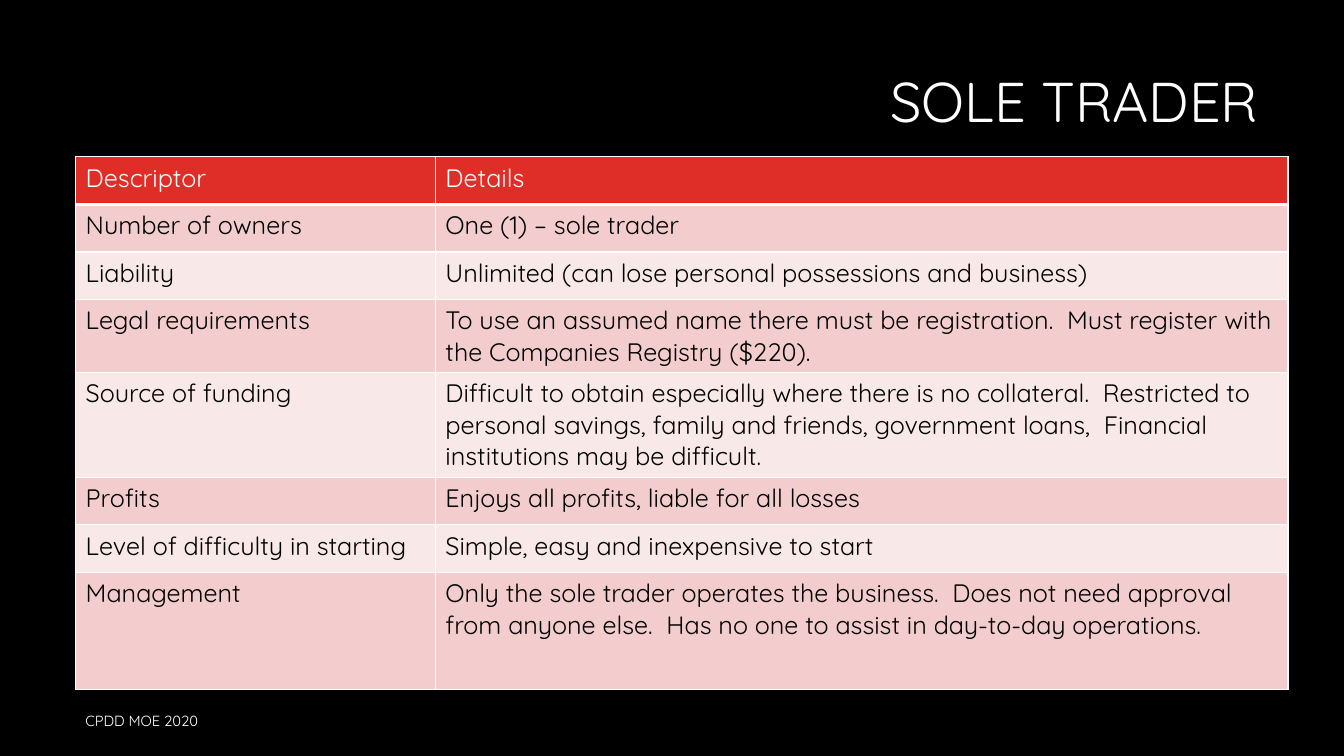
from lxml.etree import SubElement
from pptx import Presentation
from pptx.dml.color import RGBColor
from pptx.enum.text import MSO_ANCHOR as Anchor, PP_ALIGN as Align
from pptx.oxml.ns import qn
from pptx.util import Pt

FONT = "Quicksand"
WHITE, BLACK, RED = "FFFFFF", "000000", "DF2E28"
BANDS = ("F3CDCD", "F9E8E8")
COLUMN_WIDTHS = (257, 609)
ROWS = (
    (34, "Descriptor", "Details"),
    (34, "Number of owners", "One (1) – sole trader"),
    (34, "Liability", "Unlimited (can lose personal possessions and business)"),
    (52, "Legal requirements",
     "To use an assumed name there must be registration.  Must register with "
     "the Companies Registry ($220)."),
    (75, "Source of funding",
     "Difficult to obtain especially where there is no collateral.  Restricted to "
     "personal savings, family and friends, government loans,  Financial "
     "institutions may be difficult."),
    (34, "Profits", "Enjoys all profits, liable for all losses"),
    (34, "Level of difficulty in starting", "Simple, easy and inexpensive to start"),
    (83.5, "Management",
     "Only the sole trader operates the business.  Does not need approval "
     "from anyone else.  Has no one to assist in day-to-day operations."),
)


def paint(target, color):
    """Give a fill a solid colour from a hex string."""
    target.solid()
    target.fore_color.rgb = RGBColor.from_string(color)


def style(paragraph, size, color):
    """Set the font of a whole paragraph."""
    paragraph.font.name = FONT
    paragraph.font.size = Pt(size)
    paint(paragraph.font.fill, color)


def add_label(slide, box, wording, size, align=Align.LEFT, spacing=1.0):
    """Place a vertically centred line of white text in the box."""
    frame = slide.shapes.add_textbox(*map(Pt, box)).text_frame
    frame.word_wrap = True
    frame.vertical_anchor = Anchor.MIDDLE
    line = frame.paragraphs[0]
    line.text = wording
    line.alignment = align
    line.line_spacing = spacing
    style(line, size, WHITE)


def add_borders(cell, bottom_width):
    """Draw white borders around a cell, ahead of its fill."""
    properties = cell._tc.get_or_add_tcPr()
    for side, width in (("L", 1), ("R", 1), ("T", 1), ("B", bottom_width)):
        edge = SubElement(properties, qn(f"a:ln{side}"), w=str(Pt(width)))
        SubElement(SubElement(edge, qn("a:solidFill")), qn("a:srgbClr"), val=WHITE)


def add_details_table(slide, left, top):
    """Build the banded table of descriptors and details."""
    height = sum(row[0] for row in ROWS)
    table = slide.shapes.add_table(
        len(ROWS), len(COLUMN_WIDTHS),
        Pt(left), Pt(top), Pt(sum(COLUMN_WIDTHS)), Pt(height)).table
    for column, width in zip(table.columns, COLUMN_WIDTHS):
        column.width = Pt(width)
    for index, (row_height, *wordings) in enumerate(ROWS):
        table.rows[index].height = Pt(row_height)
        is_header = index == 0
        band = RED if is_header else BANDS[(index - 1) % 2]
        for cell, wording in zip(table.rows[index].cells, wordings):
            add_borders(cell, 3 if is_header else 1)
            paint(cell.fill, band)
            cell.text = wording
            line = cell.text_frame.paragraphs[0]
            style(line, 18, WHITE if is_header else BLACK)
            line.font.bold = False


def build_sole_trader(deck):
    """Add the sole trader slide with title, table and footer."""
    slide = deck.slides.add_slide(deck.slide_layouts[6])
    paint(slide.background.fill, BLACK)
    add_label(slide, (228, 24, 678, 101.5), "SOLE TRADER", 40, Align.RIGHT, 0.9)
    add_details_table(slide, 54, 112)
    add_label(slide, (54, 500.5, 612, 29), "CPDD MOE 2020", 10.5)


def main():
    """Create and save the presentation."""
    deck = Presentation()
    deck.slide_width, deck.slide_height = Pt(960), Pt(540)
    build_sole_trader(deck)
    deck.save("out.pptx")


if __name__ == "__main__":
    main()
